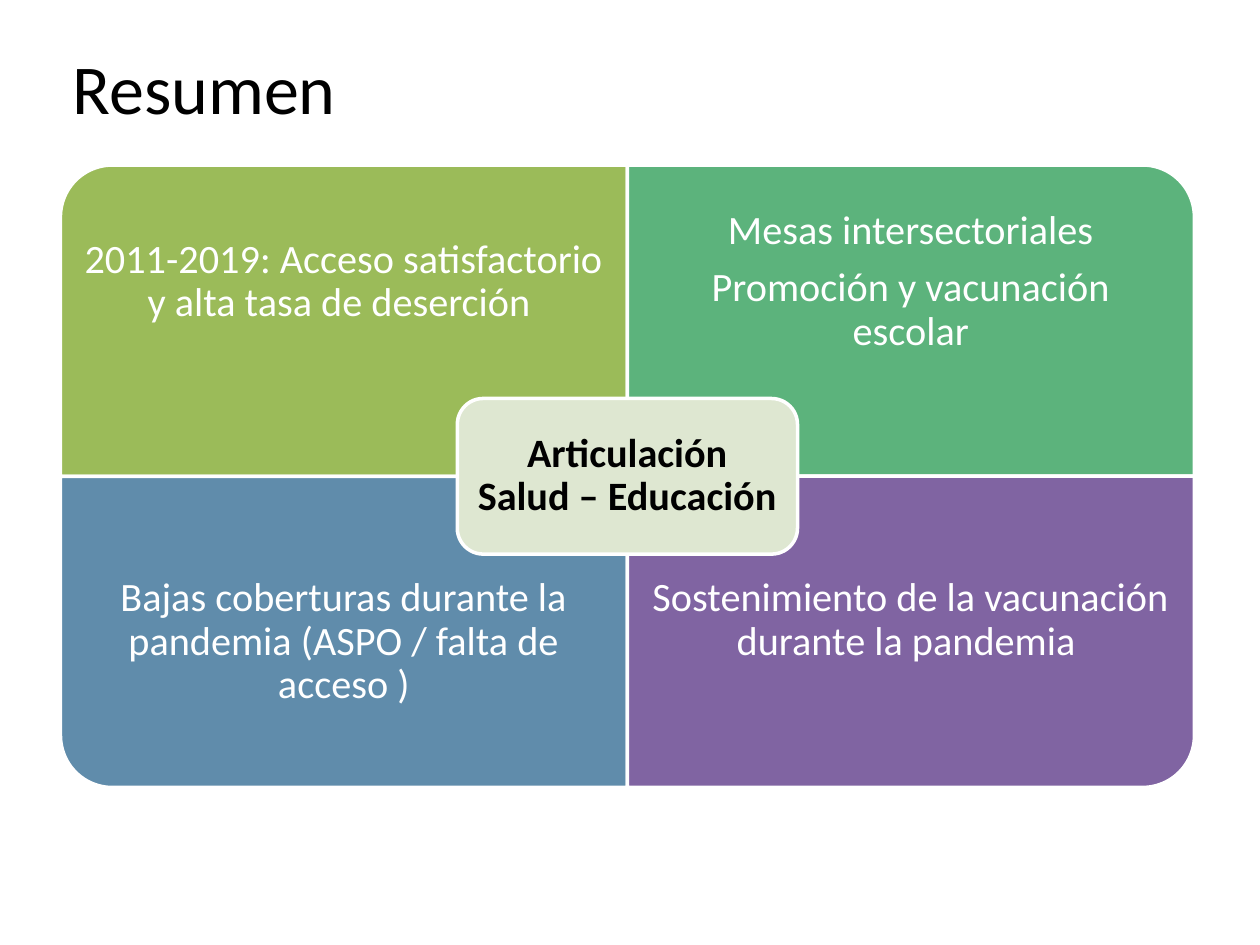
import pptx
import pptx.util
import pptx.dml.color
import pptx.enum.shapes
import pptx.enum.text

Inches = pptx.util.Inches
Pt = pptx.util.Pt
SHAPES = pptx.enum.shapes.MSO_SHAPE
ANCHORS = pptx.enum.text.MSO_ANCHOR
ALIGNMENTS = pptx.enum.text.PP_ALIGN

COLORS = {
    "black": "000000",
    "white": "FFFFFF",
    "lime": "9BBB59",
    "green": "5CB37C",
    "blue": "608CAB",
    "purple": "8064A2",
    "center": "DEE7D1",
}

QUADRANTS = [
    (0, 0, 270, "lime", ["2011-2019: Acceso satisfactorio y alta tasa de deserción "]),
    (0, 1, 0, "green", ["Mesas intersectoriales", "Promoción y vacunación escolar"]),
    (1, 0, 180, "blue", ["Bajas coberturas durante la pandemia (ASPO / falta de acceso )"]),
    (1, 1, 90, "purple", ["Sostenimiento de la vacunación durante la pandemia "]),
]


def color(name):
    return pptx.dml.color.RGBColor.from_string(COLORS[name])


def add_text(slide, paragraphs, left, top, width, height, size=23, font_color="white",
             bold=False, align=ALIGNMENTS.CENTER, anchor=ANCHORS.MIDDLE,
             inset=0.18, line_spacing=0.9, space_after=8):
    box = slide.shapes.add_textbox(Inches(left), Inches(top), Inches(width), Inches(height))
    frame = box.text_frame
    frame.word_wrap = True
    frame.vertical_anchor = anchor
    frame.margin_left = frame.margin_right = Inches(inset)
    frame.margin_top = frame.margin_bottom = Inches(inset)
    for index, text in enumerate(paragraphs):
        paragraph = frame.paragraphs[0] if index == 0 else frame.add_paragraph()
        paragraph.alignment = align
        paragraph.line_spacing = line_spacing
        paragraph.space_after = Pt(space_after)
        run = paragraph.add_run()
        run.text = text
        run.font.name = "Calibri"
        run.font.size = Pt(size)
        run.font.bold = bold
        run.font.color.rgb = color(font_color)


def add_panel(slide, kind, fill, left, top, width, height, rotation=0):
    if rotation in (90, 270):
        left, top = left + (width - height) / 2, top + (height - width) / 2
        width, height = height, width
    shape = slide.shapes.add_shape(kind, Inches(left), Inches(top), Inches(width), Inches(height))
    shape.rotation = rotation
    shape.shadow.inherit = False
    shape.fill.solid()
    shape.fill.fore_color.rgb = color(fill)
    shape.line.color.rgb = color("white")
    shape.line.width = Pt(2)


def add_title(slide, left, top, width, height):
    add_text(slide, ["Resumen"], left, top, width, height, size=40, font_color="black",
             align=ALIGNMENTS.LEFT, inset=0.1, line_spacing=1, space_after=0)


def add_center(slide, left, top, width, height):
    margin = 0.06
    add_panel(slide, SHAPES.ROUNDED_RECTANGLE, "center", left, top, width, height)
    add_text(slide, ["Articulación Salud – Educación "], left + margin, top + margin,
             width - 2 * margin, height - 2 * margin, font_color="black", bold=True, inset=0.1)


def add_matrix(slide, left, top, width, height):
    cell_width, cell_height = width / 2, height / 2
    text_height = cell_height * 0.75
    for row, column, rotation, fill, paragraphs in QUADRANTS:
        cell_left, cell_top = left + column * cell_width, top + row * cell_height
        add_panel(slide, SHAPES.ROUND_1_RECTANGLE, fill, cell_left, cell_top,
                  cell_width, cell_height, rotation)
        add_text(slide, paragraphs, cell_left, cell_top + row * (cell_height - text_height),
                 cell_width, text_height, anchor=ANCHORS.TOP if row else ANCHORS.MIDDLE)
    center_width, center_height = cell_width * 0.6, cell_height / 2
    add_center(slide, left + (width - center_width) / 2, top + (height - center_height) / 2,
               center_width, center_height)


def main():
    presentation = pptx.Presentation()
    presentation.slide_width = Inches(10)
    presentation.slide_height = Inches(7.5)
    slide = presentation.slides.add_slide(presentation.slide_layouts[6])
    add_title(slide, 0.48, 0.06, 9, 1.25)
    add_matrix(slide, 0.48, 1.31, 9, 4.94)
    presentation.save("out.pptx")


if __name__ == "__main__":
    main()
